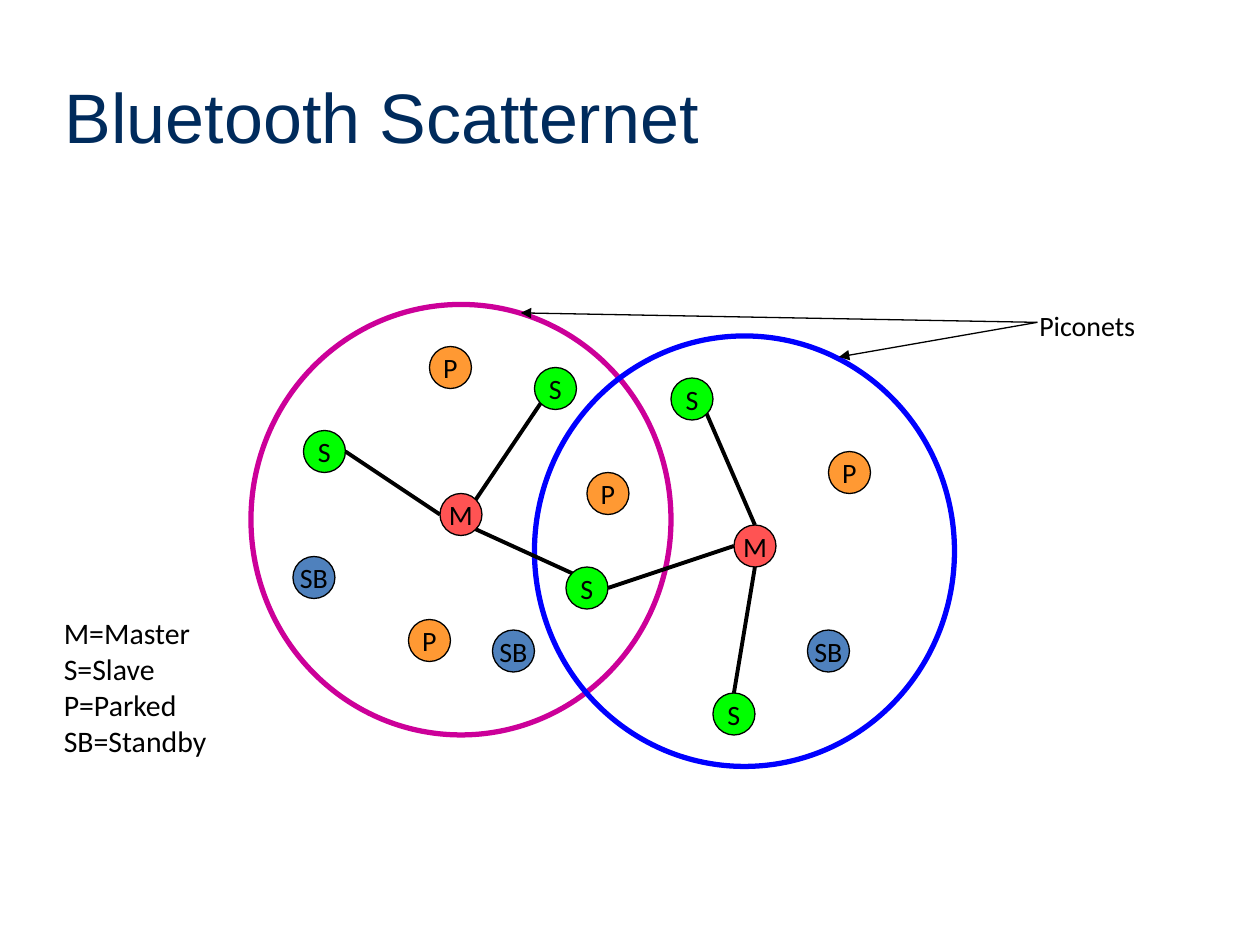
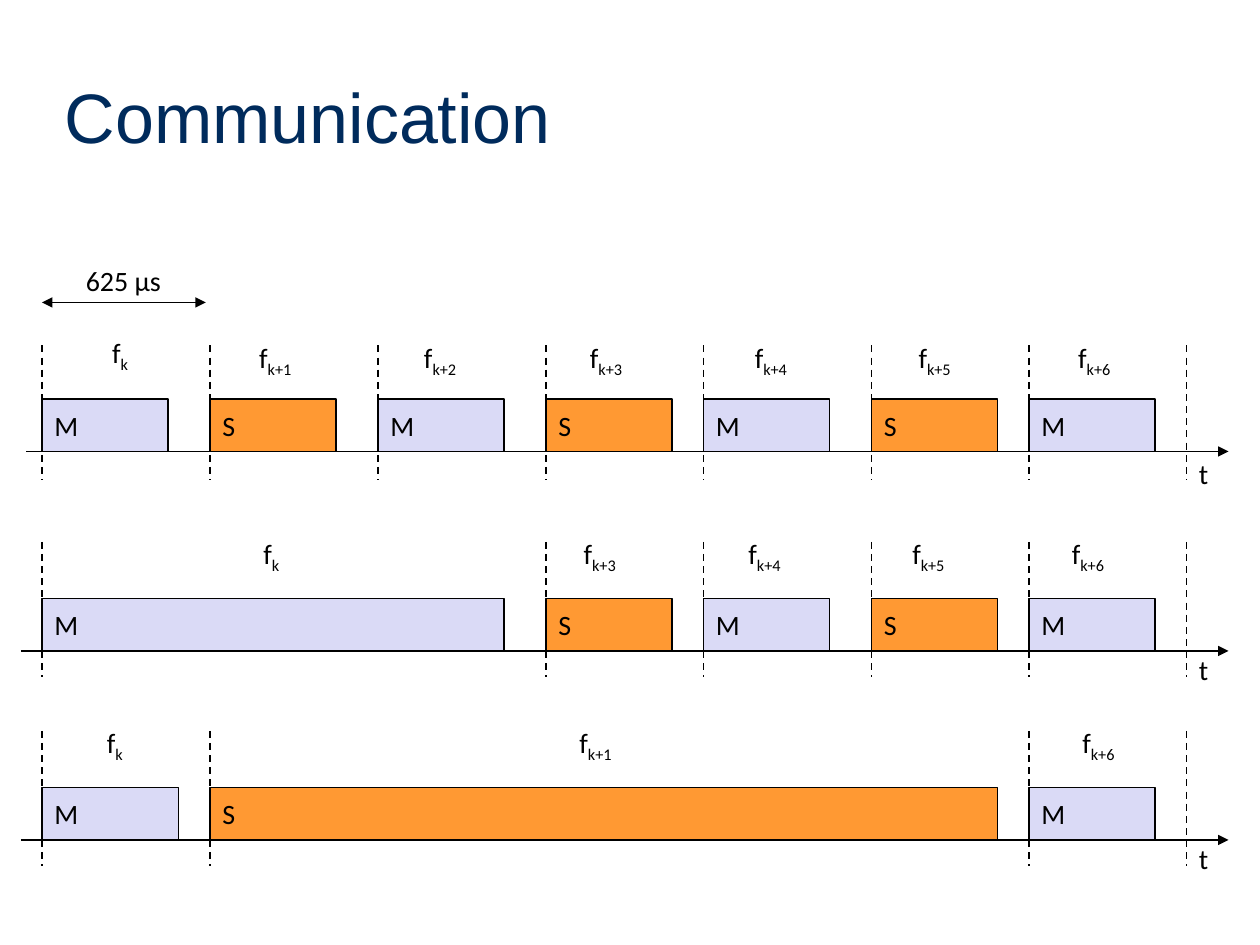
"""Build two slides on Bluetooth scatternets and slot timing."""
from lxml import etree
from pptx import Presentation
from pptx import util as u
from pptx.dml.color import RGBColor
from pptx.enum import dml, shapes, text
from pptx.oxml import ns

COLORS = {"title": "002B5C", "ink": "000000", "left net": "CC0099", "right net": "0000FF",
          "M": "FF5353", "S": "00FF00", "P": "FF9933", "SB": "4F81BD",
          "M slot": "DADAF6", "S slot": "FF9933"}
CELLS_PER_INCH = 12
NODE = 4


def cells(count):
    return u.Inches(count / CELLS_PER_INCH)


def color(name):
    return RGBColor.from_string(COLORS[name])


class Deck:
    """Slides on a grid of 120 columns by 90 rows, with one shared style."""

    def __init__(self):
        self.show = Presentation()
        self.show.slide_width, self.show.slide_height = cells(120), cells(90)
        self.slide = None

    def new_slide(self, title):
        self.slide = self.show.slides.add_slide(self.show.slide_layouts[6])
        heading = self.label(title, 5, 5, 109, 12, size=40, font="Arial", ink="title")
        heading.auto_size = text.MSO_AUTO_SIZE.NONE
        heading.word_wrap = True
        heading.vertical_anchor = text.MSO_ANCHOR.MIDDLE

    def style_run(self, run, size=16, font="Calibri", ink="ink"):
        run.font.size, run.font.name = u.Pt(size), font
        run.font.color.rgb = color(ink)

    def fill_text(self, frame, words, align=text.PP_ALIGN.LEFT, **style):
        frame.text = words
        frame.word_wrap = False
        for paragraph in frame.paragraphs:
            paragraph.alignment = align
            for run in paragraph.runs:
                self.style_run(run, **style)
        return frame

    def label(self, words, column, row, width, height, **style):
        box = self.slide.shapes.add_textbox(*map(cells, (column, row, width, height)))
        frame = self.fill_text(box.text_frame, words, **style)
        frame.auto_size = text.MSO_AUTO_SIZE.SHAPE_TO_FIT_TEXT
        return frame

    def frequency(self, index, column, row):
        frame = self.label("f", column, row, 4.1 if index == "k" else 6.1, 4.3)
        subscript = frame.paragraphs[0].add_run()
        subscript.text = index
        self.style_run(subscript)
        subscript._r.get_or_add_rPr().set("baseline", "-25000")

    def shape(self, kind, column, row, width, height, fill=None, line="ink", weight=0.75):
        outline = self.slide.shapes.add_shape(kind, *map(cells, (column, row, width, height)))
        outline.shadow.inherit = False
        if fill:
            outline.fill.solid()
            outline.fill.fore_color.rgb = color(fill)
        else:
            outline.fill.background()
        outline.line.color.rgb = color(line)
        outline.line.width = u.Pt(weight)
        outline.text_frame.vertical_anchor = text.MSO_ANCHOR.MIDDLE
        return outline.text_frame

    def circle(self, *place, **style):
        return self.shape(shapes.MSO_SHAPE.OVAL, *place, **style)

    def node(self, role, column, row):
        frame = self.circle(column, row, NODE, NODE, fill=role)
        self.fill_text(frame, role, align=text.PP_ALIGN.CENTER)

    def slot(self, device, column, row, span):
        frame = self.shape(shapes.MSO_SHAPE.RECTANGLE, column, row, span, 5, fill=f"{device} slot")
        self.fill_text(frame, device)

    def line(self, start, end, weight=1.0, dashed=False, arrows=()):
        stroke = self.slide.shapes.add_connector(
            shapes.MSO_CONNECTOR.STRAIGHT, *map(cells, (*start, *end)))
        stroke.line.color.rgb = color("ink")
        stroke.line.width = u.Pt(weight)
        if dashed:
            stroke.line.dash_style = dml.MSO_LINE.DASH
        properties = stroke._element.spPr
        for tip in arrows:
            etree.SubElement(properties.find(ns.qn("a:ln")), ns.qn(f"a:{tip}"), type="triangle")
        etree.SubElement(properties, ns.qn("a:effectLst"))


def scatternet(deck):
    deck.new_slide("Bluetooth Scatternet")
    deck.circle(23.9, 29, 40, 41, line="left net", weight=3)
    deck.circle(50.9, 32, 40, 41, line="right net", weight=3)
    deck.label("M=Master\nS=Slave\nP=Parked\nSB=Standby", 4.9, 58, 18.5, 14.9, size=17)

    left_master, right_master, bridge = (41.9, 47), (69.9, 50), (53.9, 54)
    left_slave, upper_slave = (28.9, 41), (50.9, 35)
    right_slave, lower_slave = (63.9, 36), (67.9, 66)
    members = {
        "M": [left_master, right_master],
        "S": [left_slave, upper_slave, bridge, right_slave, lower_slave],
        "P": [(38.9, 59), (40.9, 33), (55.9, 45), (78.9, 43)],
        "SB": [(27.9, 53), (46.9, 60), (76.9, 60)],
    }
    for role, places in members.items():
        for place in places:
            deck.node(role, *place)

    rim = {"top": (0.5, 0), "left": (0, 0.5), "bottom": (0.5, 1), "right": (1, 0.5),
           "top left": (0.15, 0.15), "top right": (0.85, 0.15),
           "bottom left": (0.15, 0.85), "bottom right": (0.85, 0.85)}

    def on_rim(place, side):
        return [corner + NODE * share for corner, share in zip(place, rim[side])]

    for master, master_side, slave, slave_side in [
            (left_master, "left", left_slave, "right"),
            (left_master, "top right", upper_slave, "bottom left"),
            (left_master, "bottom right", bridge, "top left"),
            (right_master, "top", right_slave, "bottom right"),
            (right_master, "left", bridge, "right"),
            (right_master, "bottom", lower_slave, "top")]:
        deck.line(on_rim(master, master_side), on_rim(slave, slave_side), weight=2.25)

    deck.label("Piconets", 97.8, 28.8, 11.6, 4.4)
    for net_edge in [(49.6, 29.8), (79.9, 34)]:
        deck.line((98.8, 30.7), net_edge, weight=0.75, arrows=["tailEnd"])


def communication(deck):
    deck.new_slide("Communication")
    deck.label("625 µs", 7, 24.5, 10.3, 4.3)
    deck.line((4, 28.8), (19.6, 28.8), arrows=["headEnd", "tailEnd"])

    single_slots = [("M", 4, 12, "k", 9.5), ("S", 20, 12, "k+1", 23.5),
                    ("M", 36, 12, "k+2", 39.2), ("S", 52, 12, "k+3", 55),
                    ("M", 67, 12, "k+4", 70.7), ("S", 83, 12, "k+5", 86.3),
                    ("M", 98, 12, "k+6", 101.5)]
    shifted = [(*slot, column - 0.6) for *slot, column in single_slots[3:]]
    long_master = [("M", 4, 44, "k", 23.9), *shifted]
    long_slave = [("M", 4, 13, "k", 9), ("S", 20, 75, "k+1", 54), ("M", 98, 12, "k+6", 101.9)]

    for slots, bar_row, mark_row, axis_start, first_lift in [
            (single_slots, 38, 32.9, 2.5, 0.4),
            (long_master, 57, 51.6, 2, 0),
            (long_slave, 75, 69.6, 2, 0)]:
        for column in [slot[1] for slot in slots] + [113]:
            deck.line((column, mark_row), (column, mark_row + 12.85), dashed=True)
        for device, column, span, index, index_column in slots:
            deck.slot(device, column, bar_row, span)
            lift = first_lift if index == "k" else 0
            deck.frequency(index, index_column, mark_row - 1.1 - lift)
        deck.line((axis_start, bar_row + 5), (117, bar_row + 5), arrows=["tailEnd"])
        deck.label("t", 113, mark_row + 10, 3.1, 4.4)


def main():
    deck = Deck()
    scatternet(deck)
    communication(deck)
    deck.show.save("out.pptx")


if __name__ == "__main__":
    main()
